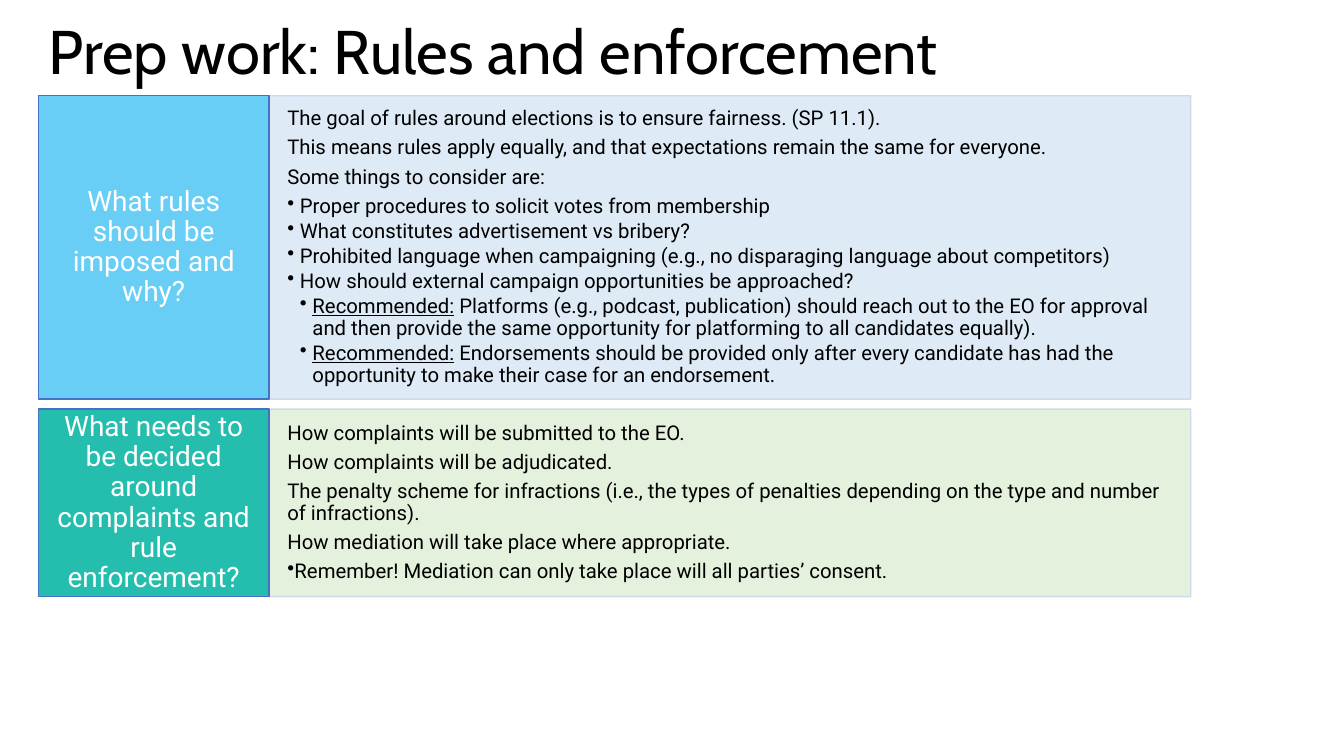
from pptx import Presentation
from pptx import util as u
from pptx.dml.color import RGBColor
from pptx.enum import shapes, text
from pptx.oxml.ns import qn
from lxml import etree

HUES = {"black": "000000", "white": "FFFFFF", "sky": "69CEF6", "pale": "DEEBF7",
        "teal": "25BDAD", "mint": "E2F0D9", "blue": "4472C4", "edge": "CFD5EA"}
FADED = {HUES["mint"], HUES["edge"]}

HEAD = {"name": "Cabin", "size": u.Pt(44)}
LABEL = {"name": "Roboto", "size": u.Pt(20)}
BODY = {"name": "Roboto", "size": u.Pt(14.5)}

LEFT, SPLIT, RIGHT = 27.4, 192.2, 850.6

# Each row: top, height, label, label hue, body hue, bullet step, (level, words) pairs
ROWS = [
    (68.4, 216.8, "What rules should be imposed and why?", "sky", "pale", 9, [
        (0, "The goal of rules around elections is to ensure fairness. (SP 11.1)."),
        (0, "This means rules apply equally, and that expectations remain the same for everyone."),
        (0, "Some things to consider are:"),
        (1, "Proper procedures to solicit votes from membership"),
        (1, "What constitutes advertisement vs bribery?"),
        (1, "Prohibited language when campaigning (e.g., no disparaging language about competitors)"),
        (1, "How should external campaign opportunities be approached?"),
        (2, "Recommended:| Platforms (e.g., podcast, publication) should reach out to the EO for "
            "approval and then provide the same opportunity for platforming to all candidates equally)."),
        (2, "Recommended:| Endorsements should be provided only after every candidate has had the "
            "opportunity to make their case for an endorsement."),
    ]),
    (292.2, 134, "What needs to be decided around complaints and rule enforcement?",
     "teal", "mint", 4.5, [
        (0, "How complaints will be submitted to the EO."),
        (0, "How complaints will be adjudicated."),
        (0, "The penalty scheme for infractions (i.e., the types of penalties depending on the "
            "type and number of infractions)."),
        (0, "How mediation will take place where appropriate."),
        (1, "Remember! Mediation can only take place will all parties’ consent."),
    ]),
]


def rgb(hue):
    return RGBColor.from_string(HUES[hue])


def put(item, form):
    for key, value in form.items():
        setattr(item, key, value)


class Deck:
    def __init__(self):
        self.show = Presentation()
        put(self.show, {"slide_width": u.Pt(960), "slide_height": u.Pt(540)})
        self.slide = self.show.slides.add_slide(self.show.slide_layouts[5])

    def style(self, para, font, hue, align, after=0):
        put(para, {"alignment": align, "line_spacing": 0.9, "space_after": u.Pt(after),
                   "space_before": u.Pt(0)})
        put(para.font, font)
        para.font.color.rgb = rgb(hue)

    def frame(self, shape, side, edge):
        put(shape.text_frame, {
            "word_wrap": True, "auto_size": text.MSO_AUTO_SIZE.NONE,
            "vertical_anchor": text.MSO_ANCHOR.MIDDLE,
            "margin_left": u.Pt(side), "margin_right": u.Pt(side),
            "margin_top": u.Pt(edge), "margin_bottom": u.Pt(edge)})
        return shape.text_frame

    def title(self, words):
        head = self.slide.shapes.title
        put(head, {"left": u.Pt(LEFT), "top": u.Pt(0),
                   "width": u.Pt(785), "height": u.Pt(78.5)})
        para = self.frame(head, 7.2, 3.6).paragraphs[0]
        para.text = words
        self.style(para, HEAD, "black", text.PP_ALIGN.LEFT)

    def box(self, left, right, top, high, fill, line):
        box = self.slide.shapes.add_shape(
            shapes.MSO_SHAPE.RECTANGLE, u.Pt(left), u.Pt(top), u.Pt(right - left), u.Pt(high))
        box.shadow.inherit = False
        box.fill.solid()
        box.fill.fore_color.rgb = rgb(fill)
        box.line.color.rgb = rgb(line)
        box.line.width = u.Pt(1)
        for tint in box.element.spPr.iter(qn("a:srgbClr")):
            if tint.get("val") in FADED:
                etree.SubElement(tint, qn("a:alpha"), val="90000")
        return box

    def label(self, top, high, words, fill):
        box = self.box(LEFT, SPLIT, top, high, fill, "blue")
        para = self.frame(box, 8.6, 0).paragraphs[0]
        para.text = words
        self.style(para, LABEL, "white", text.PP_ALIGN.CENTER)

    def bullet(self, para, step):
        para_pr = para._p.get_or_add_pPr()
        para_pr.set("marL", str(u.Pt(step * para.level)))
        para_pr.set("indent", str(-u.Pt(step)))
        etree.SubElement(para_pr, qn("a:buChar"), char="•")

    def body(self, top, high, fill, step, items):
        """Fill a panel; words before a | are underlined."""
        frame = self.frame(self.box(SPLIT, RIGHT, top, high, fill, "edge"), 13, 0)
        for i, (level, words) in enumerate(items):
            para = frame.add_paragraph() if i else frame.paragraphs[0]
            para.level = level
            if level:
                self.bullet(para, step)
            self.style(para, BODY, "black", text.PP_ALIGN.LEFT, 2.2 if level else 5.1)
            lead, mark, rest = words.rpartition("|")
            if mark:
                run = para.add_run()
                run.text = lead
                run.font.underline = True
            para.add_run().text = rest


def main():
    deck = Deck()
    deck.title("Prep work: Rules and enforcement")
    for top, high, words, hue, fill, step, items in ROWS:
        deck.body(top, high, fill, step, items)
        deck.label(top, high, words, hue)
    deck.show.save("out.pptx")


if __name__ == "__main__":
    main()
